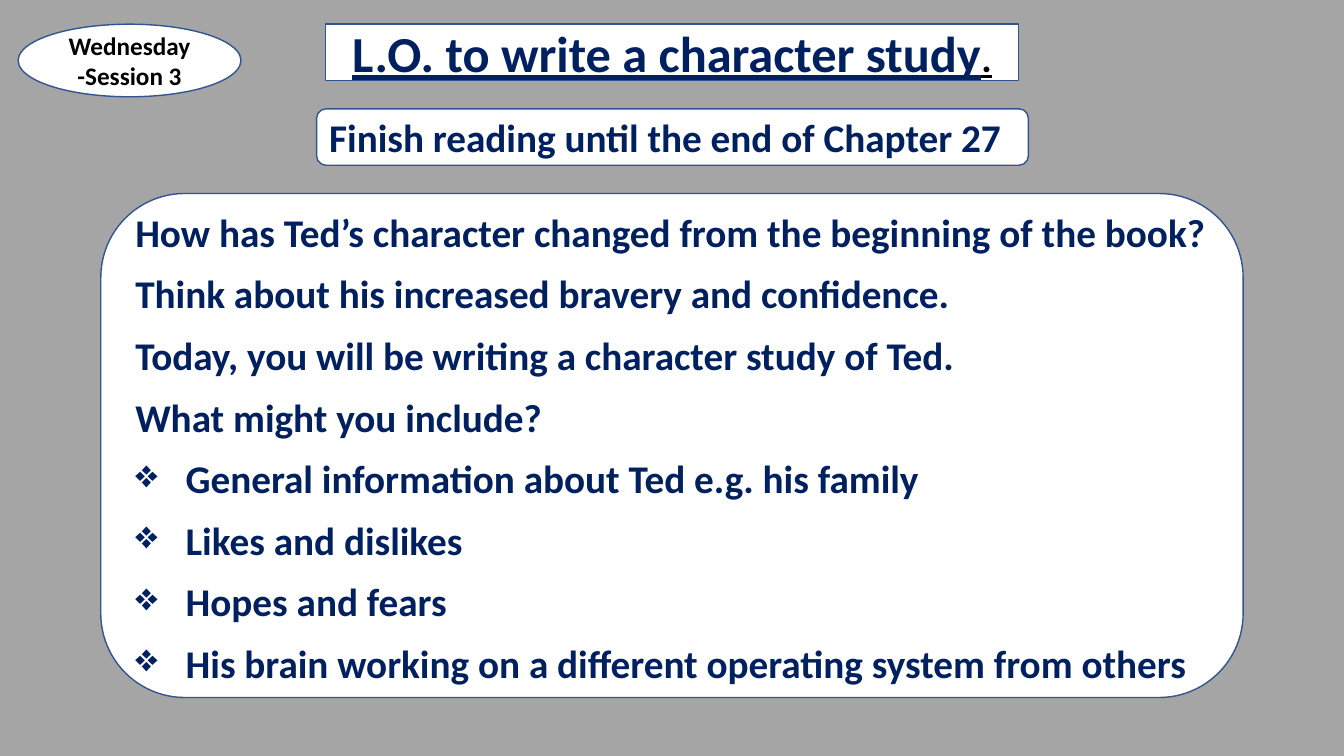
from dataclasses import dataclass

from lxml.etree import SubElement
from pptx import Presentation
from pptx.dml.color import RGBColor
from pptx.enum.shapes import MSO_SHAPE
from pptx.enum.text import MSO_ANCHOR, PP_ALIGN
from pptx.oxml.ns import qn
from pptx.slide import Slide
from pptx.util import Inches, Pt

GREY = RGBColor(0xA5, 0xA5, 0xA5)
WHITE = RGBColor(0xFF, 0xFF, 0xFF)
BLACK = RGBColor(0x00, 0x00, 0x00)
NAVY = RGBColor(0x00, 0x20, 0x60)
OUTLINE = RGBColor(0x32, 0x54, 0x91)

FONT = "Calibri"
BULLET = "❖"
BULLET_INDENT = Inches(0.5)


@dataclass(frozen=True)
class Span:
    text: str
    size: int = 28
    color: RGBColor = NAVY
    underline: bool = False


@dataclass(frozen=True)
class Para:
    spans: tuple[Span, ...]
    align: PP_ALIGN = PP_ALIGN.LEFT
    line_spacing: float = 1.0
    space_after: int = 0
    bulleted: bool = False


@dataclass(frozen=True)
class Box:
    kind: MSO_SHAPE
    left: float
    top: float
    width: float
    height: float
    paras: tuple[Para, ...]


def task_para(text: str, bulleted: bool = False) -> Para:
    return Para((Span(text),), line_spacing=1.07, space_after=8, bulleted=bulleted)


PROMPTS = (
    "How has Ted’s character changed from the beginning of the book?",
    "Think about his increased bravery and confidence.",
    "Today, you will be writing a character study of Ted.",
    "What might you include?",
)
IDEAS = (
    "General information about Ted e.g. his family",
    "Likes and dislikes",
    "Hopes and fears",
    "His brain working on a different operating system from others",
)

SESSION = Para((Span("Wednesday -Session 3", 18, BLACK),), PP_ALIGN.CENTER, space_after=6)
READING = Para((Span("Finish reading until the end of Chapter 27"),))
OBJECTIVE = Para(
    (
        Span("L.O. to write a character study", 36, underline=True),
        Span(".", 28, BLACK, underline=True),
    ),
    PP_ALIGN.CENTER,
)
TASK = tuple(task_para(text) for text in PROMPTS) + tuple(
    task_para(text, bulleted=True) for text in IDEAS
)

BOXES = (
    Box(MSO_SHAPE.OVAL, 0.18, 0.24, 2.21, 0.72, (SESSION,)),
    Box(MSO_SHAPE.ROUNDED_RECTANGLE, 3.14, 1.08, 7.06, 0.56, (READING,)),
    Box(MSO_SHAPE.RECTANGLE, 3.23, 0.24, 6.87, 0.56, (OBJECTIVE,)),
    Box(MSO_SHAPE.ROUNDED_RECTANGLE, 1, 1.92, 11.33, 5, TASK),
)


def write_para(paragraph, para: Para) -> None:
    paragraph.alignment = para.align
    paragraph.line_spacing = para.line_spacing
    paragraph.space_after = Pt(para.space_after)
    if para.bulleted:
        properties = paragraph._p.get_or_add_pPr()
        properties.set("marL", str(BULLET_INDENT))
        properties.set("indent", str(-BULLET_INDENT))
        SubElement(properties, qn("a:buChar")).set("char", BULLET)
    for span in para.spans:
        run = paragraph.add_run()
        run.text = span.text
        run.font.name = FONT
        run.font.size = Pt(span.size)
        run.font.bold = True
        run.font.underline = span.underline
        run.font.color.rgb = span.color


def draw_box(page: Slide, box: Box) -> None:
    shape = page.shapes.add_shape(
        box.kind, Inches(box.left), Inches(box.top), Inches(box.width), Inches(box.height)
    )
    shape.shadow.inherit = False
    shape.fill.solid()
    shape.fill.fore_color.rgb = WHITE
    shape.line.color.rgb = OUTLINE
    shape.line.width = Pt(1)
    frame = shape.text_frame
    frame.word_wrap = True
    frame.vertical_anchor = MSO_ANCHOR.MIDDLE
    for index, para in enumerate(box.paras):
        write_para(frame.add_paragraph() if index else frame.paragraphs[0], para)


def main() -> None:
    deck = Presentation()
    deck.slide_width = Inches(13.33)
    deck.slide_height = Inches(7.5)
    page = deck.slides.add_slide(deck.slide_layouts[6])
    page.background.fill.solid()
    page.background.fill.fore_color.rgb = GREY
    for box in BOXES:
        draw_box(page, box)
    deck.save("out.pptx")


if __name__ == "__main__":
    main()
